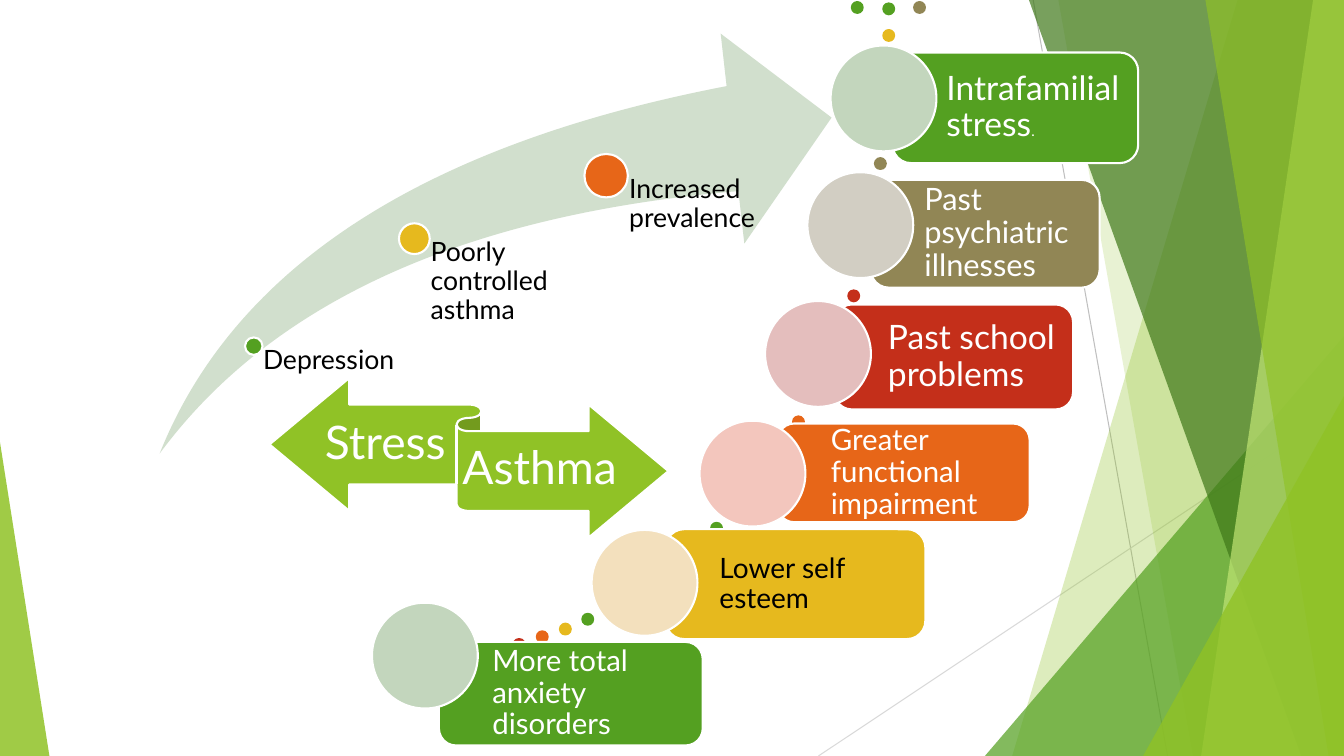
from pptx import Presentation
from pptx.dml.color import RGBColor
from pptx.enum.shapes import MSO_CONNECTOR, MSO_SHAPE
from pptx.enum.text import MSO_ANCHOR, PP_ALIGN
from pptx.oxml.ns import qn
from pptx.util import Pt
from lxml.etree import SubElement

WIDTH, HEIGHT = 960, 540
GREEN, YELLOW, ORANGE, RED, OLIVE = "54A021", "E6B91E", "E76618", "C42F1A", "918655"
LIME, WHITE, BLACK = "90C226", "FFFFFF", "000000"


def paint(colour_format, colour):
    colour_format.rgb = RGBColor.from_string(colour)


def set_all(target, values):
    for name, value in values.items():
        setattr(target, name, value)


class SlideBuilder:
    font = "Lato"
    outline = 1.5

    def __init__(self, slide):
        self.slide = slide
        self.shapes = slide.shapes

    def finish(self, shape, fill, line=None, opacity=100):
        shape.shadow.inherit = False
        shape.fill.solid()
        paint(shape.fill.fore_color, fill)
        if opacity < 100:
            colour = shape._element.spPr.find(qn("a:solidFill"))[0]
            SubElement(colour, qn("a:alpha"), val=str(opacity * 1000))
        if line:
            paint(shape.line.color, line)
            shape.line.width = Pt(self.outline)
        else:
            shape.line.fill.background()
        return shape

    def preset(self, kind, box, fill, line=None, opacity=100, adjustments=()):
        shape = self.shapes.add_shape(kind, *map(Pt, box))
        for index, value in enumerate(adjustments):
            shape.adjustments[index] = value
        return self.finish(shape, fill, line, opacity)

    def circle(self, x, y, diameter, fill, line=WHITE):
        return self.preset(MSO_SHAPE.OVAL, (x, y, diameter, diameter), fill, line)

    def band(self, top_x, bottom_x, fill, opacity):
        outline = self.shapes.build_freeform(Pt(top_x), 0, scale=1.0)
        corners = [(WIDTH, 0), (WIDTH, HEIGHT), (bottom_x, HEIGHT)]
        outline.add_line_segments([(Pt(x), Pt(y)) for x, y in corners])
        return self.finish(outline.convert_to_shape(), fill, opacity=opacity)

    def hairline(self, start, end, colour):
        line = self.shapes.add_connector(MSO_CONNECTOR.STRAIGHT, *map(Pt, start + end))
        paint(line.line.color, colour)
        line.line.width = Pt(0.75)
        SubElement(line._element.spPr, qn("a:effectLst"))

    def add_words(self, shape, runs, colour, insets, align=PP_ALIGN.LEFT,
                  anchor=MSO_ANCHOR.MIDDLE):
        frame = shape.text_frame
        sides = ("margin_left", "margin_top", "margin_right", "margin_bottom")
        set_all(frame, {"word_wrap": True, "vertical_anchor": anchor,
                        **dict(zip(sides, map(Pt, insets)))})
        paragraph = frame.paragraphs[0]
        set_all(paragraph, {"alignment": align, "line_spacing": 0.9})
        for words, size in runs:
            run = paragraph.add_run()
            run.text = words
            set_all(run.font, {"name": self.font, "size": Pt(size)})
            paint(run.font.color, colour)

    def label(self, box, words, size, colour, insets, **layout):
        holder = self.shapes.add_textbox(*map(Pt, box))
        self.add_words(holder, [(words, size)], colour, insets, **layout)

    def card(self, box, fill, runs, colour):
        card = self.preset(MSO_SHAPE.ROUNDED_RECTANGLE, box, fill, WHITE)
        inset = 0.3 * runs[0][1]
        self.add_words(card, runs, colour, (34.6, inset, inset, inset))


def draw_backdrop(builder):
    triangle = MSO_SHAPE.ISOSCELES_TRIANGLE
    builder.hairline((738, 0), (834, HEIGHT), "BFBFBF")
    builder.hairline((WIDTH, 290), (584.6, HEIGHT), "D9D9D9")
    builder.band(884, 723, LIME, 30)
    builder.band(756, 852, LIME, 20)
    builder.preset(triangle, (703.5, 240, 256.5, 300), GREEN, opacity=72, adjustments=[1])
    for band in [(735, 929.5, "3F7819", 70), (938, 858, "C0E474", 70), (861, 949, LIME, 65)]:
        builder.band(*band)
    builder.preset(triangle, (816.5, 283, 143.5, 257), LIME, opacity=80, adjustments=[1])
    builder.preset(triangle, (0, 316, 35.3, 224), LIME, opacity=85, adjustments=[0])


def draw_ribbon(builder):
    builder.preset(MSO_SHAPE.LEFT_RIGHT_RIBBON, (192.5, 270, 285, 114), LIME, WHITE)
    for words, box in [("Stress", (228, 290, 94.5, 56)), ("Asthma", (330, 308, 111, 56))]:
        builder.label(box, words, 33, WHITE, (0, 9.4, 0, 10), align=PP_ALIGN.CENTER)


def draw_arrow(builder):
    builder.preset(MSO_SHAPE.SWOOSH_ARROW, (114, 24, 480, 300), "D1DFCD",
                   adjustments=[0.25, 0.25])
    milestones = [
        ("Depression", 175, 241, 12.5, GREEN, 112),
        ("Poorly controlled asthma", 285, 159.5, 22, YELLOW, 115),
        ("Increased prevalence", 417.5, 110, 31, ORANGE, 115),
    ]
    for words, x, y, diameter, fill, width in milestones:
        builder.circle(x, y, diameter, fill)
        radius = diameter / 2
        box = (x + radius, y + radius, width, 334 - y - radius)
        builder.label(box, words, 19, BLACK, (diameter * 0.53, 0, 0, 0),
                      anchor=MSO_ANCHOR.TOP)


def draw_factors(builder):
    dots = [
        (416, 438.5, GREEN), (400, 445.5, YELLOW), (383.5, 451, ORANGE), (367, 456.5, RED),
        (508, 373.5, GREEN), (566.5, 297.5, ORANGE), (606, 207.5, RED), (625, 113, OLIVE),
        (608.5, 1.5, GREEN), (653, 1.5, OLIVE), (631, 2.5, GREEN), (631, 21.5, YELLOW),
    ]
    for x, y, colour in dots:
        builder.circle(x, y, 7.7, colour, colour)

    factors = [
        ((313.5, 458.5, 188.5, 74), GREEN, [("More total anxiety disorders", 21)], WHITE,
         (265.7, 430.5), "C3D6BD"),
        ((475.5, 378, 185.5, 78.5), YELLOW, [("Lower self esteem", 20)], BLACK,
         (422.6, 378.5), "F3E0BD"),
        ((555.5, 302.5, 180, 70.5), ORANGE, [("Greater functional impairment", 21)], WHITE,
         (499.7, 300.5), "F3C6BD"),
        ((596, 217.5, 170.5, 75), RED, [("Past school problems", 24)], WHITE,
         (546.5, 215), "E4BEBD"),
        ((622, 128.5, 163.5, 77), OLIVE, [("Past psychiatric illnesses", 22)], WHITE,
         (576.7, 123), "D2CEC3"),
        ((637.5, 37.5, 175.5, 79), GREEN, [("Intrafamilial stress", 24), (".", 10.5)], WHITE,
         (593.3, 32.5), "C3D6BD"),
    ]
    for box, fill, runs, colour, corner, tint in factors:
        builder.card(box, fill, runs, colour)
        builder.circle(*corner, 75.6, tint)


def main():
    deck = Presentation()
    set_all(deck, {"slide_width": Pt(WIDTH), "slide_height": Pt(HEIGHT)})
    builder = SlideBuilder(deck.slides.add_slide(deck.slide_layouts[6]))
    for draw in (draw_backdrop, draw_ribbon, draw_arrow, draw_factors):
        draw(builder)
    deck.save("out.pptx")


if __name__ == "__main__":
    main()
